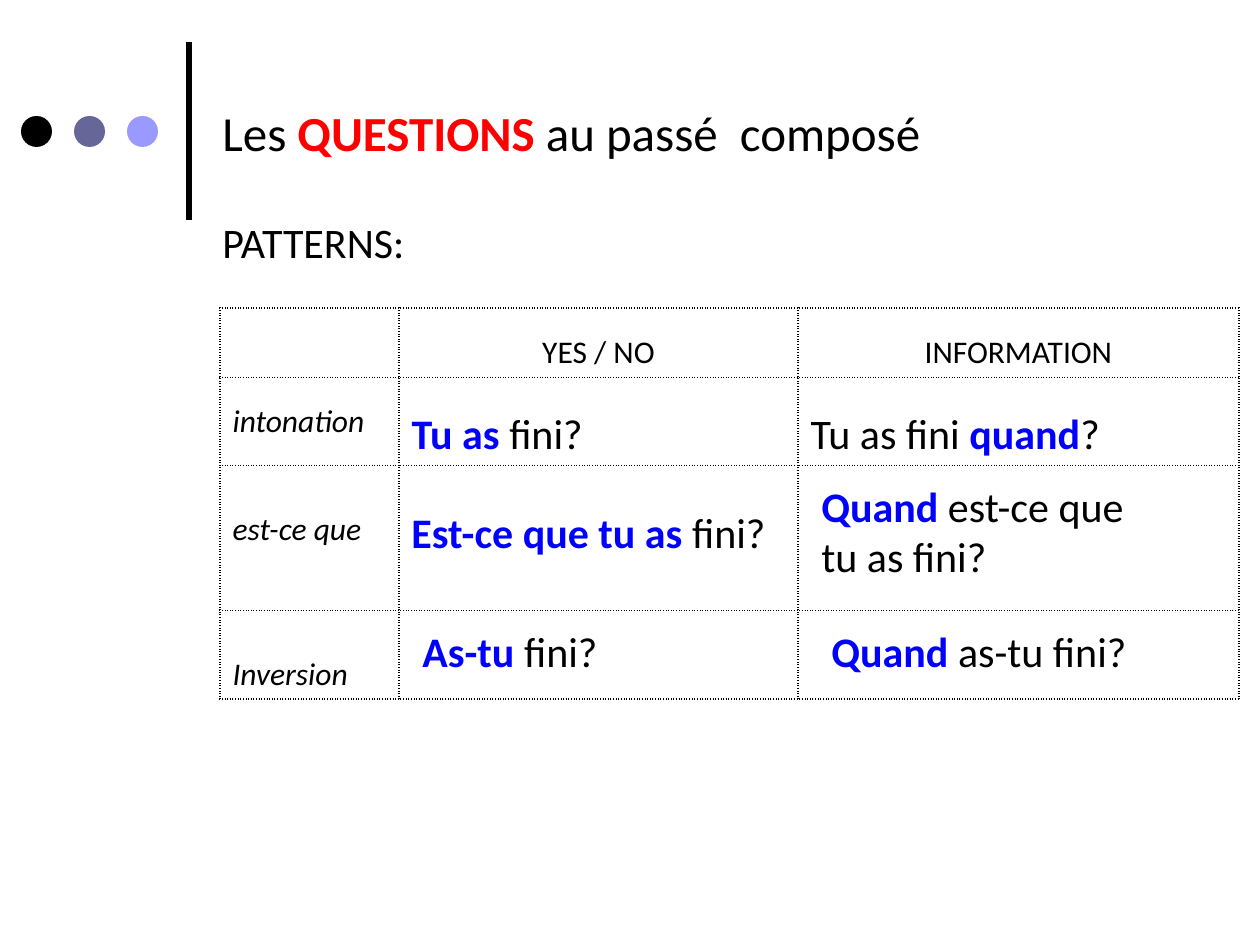
from lxml.etree import SubElement
from pptx import Presentation
from pptx.dml.color import RGBColor
from pptx.enum.shapes import MSO_CONNECTOR as Connector, MSO_SHAPE as Shape
from pptx.enum.text import MSO_ANCHOR as Anchor, PP_ALIGN as Align
from pptx.oxml import parse_xml
from pptx.oxml.ns import nsdecls, qn
from pptx.util import Emu, Pt

EMU_PER_PX = 914400 / 126
BLACK, RED, BLUE = "000000", "FF0000", "0000FF"
SLATE, LAVENDER = "666699", "9999FF"


def px(value):
    return Emu(round(value * EMU_PER_PX))


def color(value):
    return RGBColor.from_string(value)


def bold(text, ink=BLUE):
    return text, {"bold": True, "ink": ink}


def italic(text):
    return text, {"italic": True}


class SlideBuilder:
    font = "Calibri"
    border = BLACK

    def __init__(self, slide):
        self.slide = slide

    def line(self, x1, y1, x2, y2, width):
        connector = self.slide.shapes.add_connector(
            Connector.STRAIGHT, px(x1), px(y1), px(x2), px(y2))
        connector.line.color.rgb = color(BLACK)
        connector.line.width = Pt(width)
        SubElement(connector._element.spPr, qn("a:effectLst"))

    def dot(self, left, top, size, fill):
        shape = self.slide.shapes.add_shape(
            Shape.OVAL, px(left), px(top), px(size), px(size))
        shape.shadow.inherit = False
        shape.fill.solid()
        shape.fill.fore_color.rgb = color(fill)
        shape.line.fill.background()

    def add_runs(self, paragraph, runs, size, spacing=None, align=Align.LEFT):
        paragraph.alignment = align
        if spacing:
            paragraph.line_spacing = spacing
        for item in runs:
            text, style = item if isinstance(item, tuple) else (item, {})
            run = paragraph.add_run()
            run.text = text
            run.font.name = self.font
            run.font.size = Pt(size)
            run.font.bold = style.get("bold", False)
            run.font.italic = style.get("italic", False)
            run.font.color.rgb = color(style.get("ink", BLACK))

    def text(self, box, lines, size=24, spacing=None, anchor=Anchor.TOP):
        frame = self.slide.shapes.add_textbox(*map(px, box)).text_frame
        frame.word_wrap = True
        frame.vertical_anchor = anchor
        for index, runs in enumerate(lines):
            paragraph = frame.add_paragraph() if index else frame.paragraphs[0]
            self.add_runs(paragraph, runs, size, spacing)

    def dotted_borders(self, cell):
        properties = cell._tc.get_or_add_tcPr()
        for index, side in enumerate(("lnL", "lnR", "lnT", "lnB")):
            properties.insert(index, parse_xml(
                f'<a:{side} {nsdecls("a")} w="{Pt(1)}"><a:solidFill>'
                f'<a:srgbClr val="{self.border}"/></a:solidFill>'
                f'<a:prstDash val="sysDot"/></a:{side}>'))

    def table(self, left, top, widths, heights, contents):
        table = self.slide.shapes.add_table(
            len(heights), len(widths), px(left), px(top),
            px(sum(widths)), px(sum(heights))).table
        table.first_row = table.horz_banding = False
        for column, width in zip(table.columns, widths):
            column.width = px(width)
        for row, height in zip(table.rows, heights):
            row.height = px(height)
        for cell in table.iter_cells():
            cell.fill.background()
            self.dotted_borders(cell)
        for (row, column), (runs, size, spacing, align) in contents.items():
            paragraph = table.cell(row, column).text_frame.paragraphs[0]
            self.add_runs(paragraph, runs, size, spacing, align)


def main():
    presentation = Presentation()
    presentation.slide_width, presentation.slide_height = px(1260), px(945)
    builder = SlideBuilder(
        presentation.slides.add_slide(presentation.slide_layouts[6]))

    # Decoration: vertical rule and three dots
    builder.line(189, 220, 189, 42, 3)
    for index, fill in enumerate((BLACK, SLATE, LAVENDER)):
        builder.dot(21 + 53 * index, 116, 31, fill)

    # Headings
    builder.text((210, 84, 966, 96),
                 [["Les ", bold("QUESTIONS", RED), " au passé  composé"]],
                 size=28, anchor=Anchor.MIDDLE)
    builder.text((210, 210, 861, 63), [["PATTERNS:"]])

    # Table of question patterns
    builder.table(220, 308, (179, 399, 441), (69, 88, 145, 88), {
        (0, 1): (["YES / NO"], 18, 1.5, Align.CENTER),
        (0, 2): (["INFORMATION"], 18, 1.5, Align.CENTER),
        (1, 0): ([italic("intonation")], 18, 1.5, Align.LEFT),
        (1, 1): ([bold("Tu as "), "fini?"], 24, 1.5, Align.LEFT),
        (1, 2): (["Tu as fini ", bold("quand"), "?"], 24, 1.5, Align.LEFT),
        (2, 0): ([italic("est-ce que")], 18, 2.0, Align.LEFT),
        (3, 0): ([italic("Inversion")], 18, 2.0, Align.LEFT),
    })

    # Examples laid over the last two rows
    builder.text((399, 475, 394, 81),
                 [[bold("Est-ce que tu as "), "fini?"]], spacing=1.5)
    builder.text((809, 474, 379, 115),
                 [[bold("Quand "), "est-ce que"], ["tu as fini?"]])
    builder.text((410, 619, 207, 63), [[bold("As-tu "), "fini?"]])
    builder.text((819, 619, 350, 63), [[bold("Quand"), " as-tu fini?"]])

    presentation.save("out.pptx")


if __name__ == "__main__":
    main()
